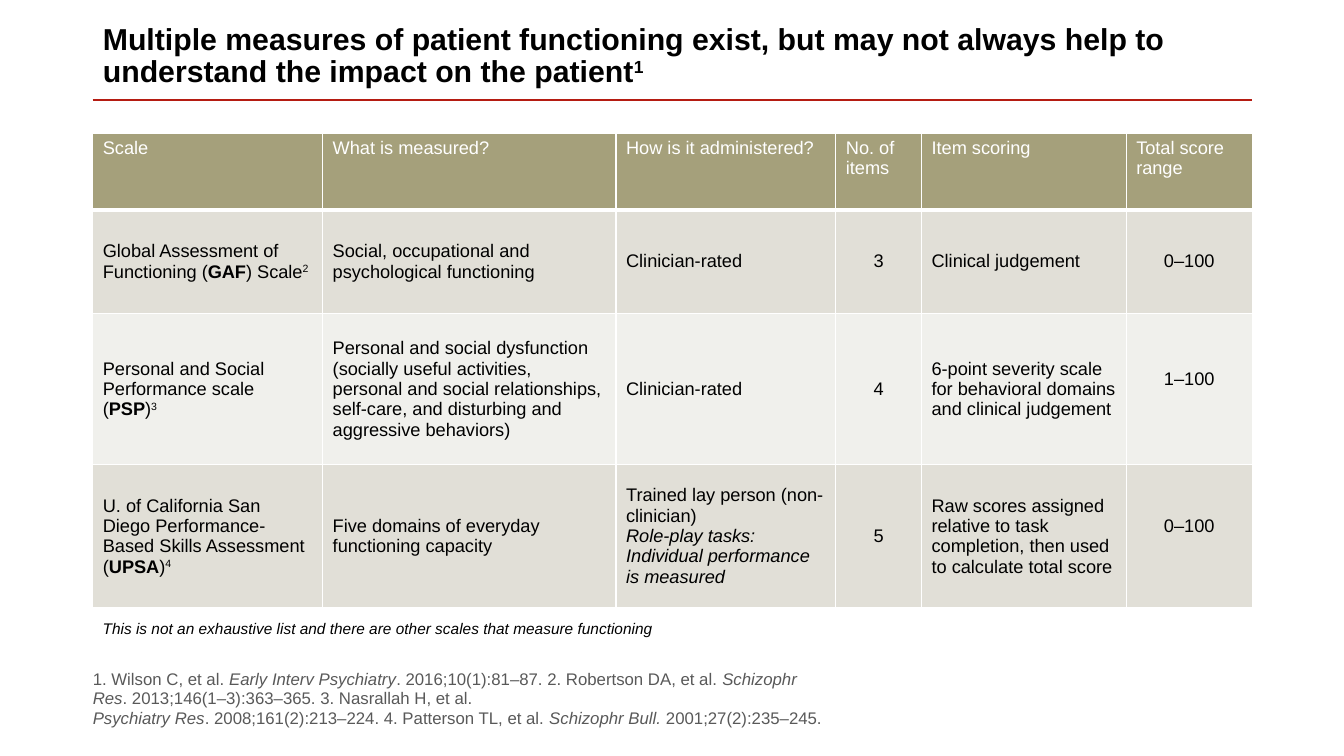
from lxml import etree
from pptx import Presentation
from pptx.dml.color import RGBColor
from pptx.enum.shapes import MSO_CONNECTOR
from pptx.enum.text import MSO_ANCHOR, MSO_AUTO_SIZE, PP_ALIGN
from pptx.oxml.ns import qn
from pptx.util import Inches, Pt

LEFT, CENTER = PP_ALIGN.LEFT, PP_ALIGN.CENTER
TOP, MIDDLE, BOTTOM = MSO_ANCHOR.TOP, MSO_ANCHOR.MIDDLE, MSO_ANCHOR.BOTTOM
NO_FIT = MSO_AUTO_SIZE.NONE
STRAIGHT = MSO_CONNECTOR.STRAIGHT

FONT = "Arial"
BLACK, WHITE, GREY, RED = "000000", "FFFFFF", "595959", "B51C12"
HEAD_FILL, BANDS = "A5A07B", ("E1DFD7", "F0F0EC")
EDGE, WIDTH = 0.92, 11.5

# A run is (text, style); style letters: b bold, i italic, s superscript
TITLE = [("Multiple measures of patient functioning exist, but may not always "
          "help to understand the impact on the patient", "b"), ("1", "bs")]
NOTE = [("This is not an exhaustive list and there are other scales that "
         "measure functioning", "i")]
SOURCES = [
    ("1. Wilson C, et al. ", ""), ("Early Interv Psychiatry", "i"),
    (". 2016;10(1):81–87. 2. Robertson DA, et al. ", ""),
    ("Schizophr Res", "i"),
    (". 2013;146(1–3):363–365. 3. Nasrallah H, et al. ", ""), ("\n", ""),
    ("Psychiatry Res", "i"),
    (". 2008;161(2):213–224. 4. Patterson TL, et al. ", ""),
    ("Schizophr Bull.", "i"), (" 2001;27(2):235–245.", ""),
]

# Table: a cell is a string or a list of paragraphs, each a list of runs
COLS = [2.28, 2.91, 2.18, 0.85, 2.03, 1.25]
ROWS = [0.76, 1.03, 1.5, 1.42]
CENTERED = (3, 5)
HEADS = ["Scale", "What is measured?", "How is it administered?",
         "No. of items", "Item scoring", "Total score range"]


def scale(name, short, end, ref):
    return [[(name + " (", ""), (short, "b"), (end, ""), (ref, "s")]]


SCALES = [
    [scale("Global Assessment of Functioning", "GAF", ") Scale", "2"),
     "Social, occupational and psychological functioning",
     "Clinician-rated", "3", "Clinical judgement", "0–100"],
    [scale("Personal and Social Performance scale", "PSP", ")", "3"),
     "Personal and social dysfunction (socially useful activities, personal "
     "and social relationships, self-care, and disturbing and aggressive "
     "behaviors)",
     "Clinician-rated", "4",
     "6-point severity scale for behavioral domains and clinical judgement",
     "1–100"],
    [scale("U. of California San Diego Performance-Based Skills Assessment",
           "UPSA", ")", "4"),
     "Five domains of everyday functioning capacity",
     [[("Trained lay person (non-clinician)", "")],
      [("Role-play tasks:", "i")],
      [("Individual performance is measured", "i")]],
     "5",
     "Raw scores assigned relative to task completion, then used to "
     "calculate total score", "0–100"],
]


def color(code):
    return RGBColor.from_string(code)


def add_runs(para, runs, size, code):
    for text, style in runs:
        if text == "\n":
            para.add_line_break()
            continue
        run = para.add_run()
        run.text = text
        font = run.font
        font.name, font.size = FONT, Pt(size)
        font.bold, font.italic = "b" in style, "i" in style
        font.color.rgb = color(code)
        if "s" in style:
            run._r.get_or_add_rPr().set("baseline", "30000")


def set_box(shape, left, top, width, height, anchor, side, edge):
    shape.left, shape.top = Inches(left), Inches(top)
    shape.width, shape.height = Inches(width), Inches(height)
    frame = shape.text_frame
    frame.word_wrap, frame.auto_size = True, NO_FIT
    frame.vertical_anchor = anchor
    frame.margin_left = frame.margin_right = Inches(side)
    frame.margin_top = frame.margin_bottom = Inches(edge)
    para = frame.paragraphs[0]
    para.alignment, para.space_before = LEFT, Pt(0)
    return para


def add_rule(slide):
    rule = slide.shapes.add_connector(
        STRAIGHT, Inches(EDGE), Inches(0.99),
        Inches(EDGE + WIDTH), Inches(0.99))
    rule.line.color.rgb, rule.line.width = color(RED), Pt(1.5)
    etree.SubElement(rule._element.spPr, qn("a:effectLst"))


def set_edges(cell, low):
    props = cell._tc.get_or_add_tcPr()
    for side, points in (("L", 1), ("R", 1), ("T", 1), ("B", low)):
        line = etree.SubElement(props, qn("a:ln" + side), w=str(Pt(points)))
        fill = etree.SubElement(line, qn("a:solidFill"))
        etree.SubElement(fill, qn("a:srgbClr"), val=WHITE)


def fill_cell(cell, content, row, col):
    head = row == 0
    set_edges(cell, 3 if head else 1)
    cell.fill.solid()
    cell.fill.fore_color.rgb = color(
        HEAD_FILL if head else BANDS[(row - 1) % 2])
    cell.vertical_anchor = TOP if head else MIDDLE
    if isinstance(content, str):
        content = [[(content, "")]]
    frame = cell.text_frame
    for i, runs in enumerate(content):
        para = frame.add_paragraph() if i else frame.paragraphs[0]
        para.alignment = CENTER if col in CENTERED and not head else LEFT
        add_runs(para, runs, 13, WHITE if head else BLACK)


def add_grid(slide):
    table = slide.shapes.add_table(
        len(ROWS), len(COLS), Inches(EDGE), Inches(1.32),
        Inches(WIDTH), Inches(sum(ROWS))).table
    table.horz_banding = False
    for col, width in zip(table.columns, COLS):
        col.width = Inches(width)
    for row, height in zip(table.rows, ROWS):
        row.height = Inches(height)
    for r, texts in enumerate([HEADS] + SCALES):
        for c, content in enumerate(texts):
            fill_cell(table.cell(r, c), content, r, c)
    # The last two score ranges sit a little above the middle
    for r in (2, 3):
        table.cell(r, len(COLS) - 1).margin_bottom = Inches(0.25)


def main():
    deck = Presentation()
    deck.slide_width, deck.slide_height = Inches(13.33), Inches(7.5)
    slide = deck.slides.add_slide(deck.slide_layouts[1])

    # Title and rule
    para = set_box(slide.shapes.title, EDGE, 0.19, WIDTH, 0.56, TOP, 0.1, 0.05)
    para.line_spacing = 0.9
    add_runs(para, TITLE, 21.6, BLACK)
    add_rule(slide)

    # References
    para = set_box(slide.placeholders[1], EDGE, 6.43, 7.26, 0.79, BOTTOM, 0, 0)
    props = para._p.get_or_add_pPr()
    props.set("marL", "0")
    props.set("indent", "0")
    etree.SubElement(props, qn("a:buNone"))
    para.line_spacing = Pt(14)
    add_runs(para, SOURCES, 12, GREY)

    # Table and note
    add_grid(slide)
    note = slide.shapes.add_textbox(0, 0, 0, 0)
    para = set_box(note, EDGE, 6.04, 7.17, 0.38, TOP, 0.1, 0.1)
    para.space_after = Pt(3)
    add_runs(para, NOTE, 11, BLACK)

    deck.save("out.pptx")


if __name__ == "__main__":
    main()
